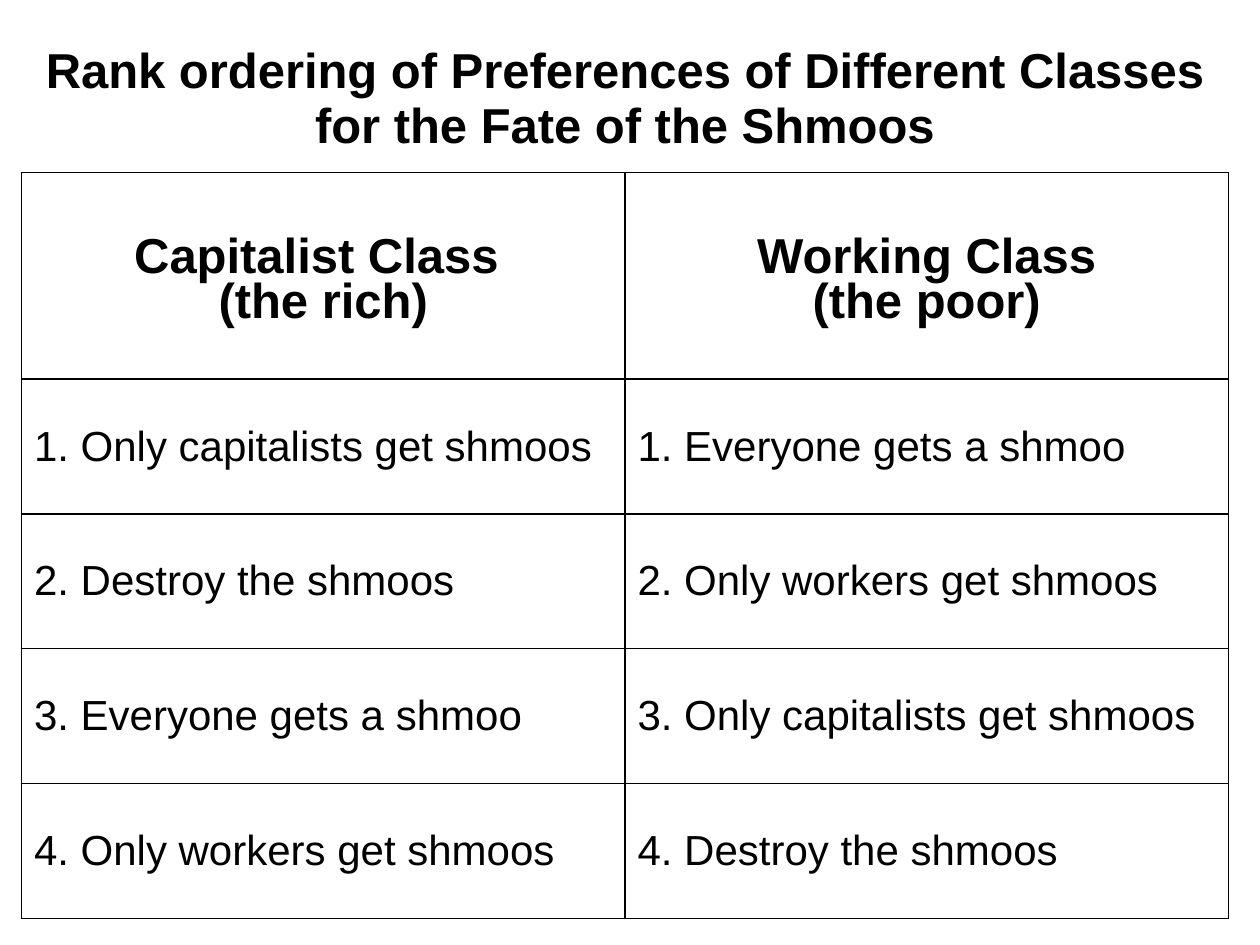
from pptx import Presentation
from pptx.dml.color import RGBColor
from pptx.enum.text import MSO_ANCHOR, PP_ALIGN
from pptx.oxml.ns import qn
from pptx.util import Inches, Pt
from lxml.etree import SubElement

BLACK = RGBColor(0, 0, 0)
WHITE = RGBColor(255, 255, 255)

TITLE = "Rank ordering of Preferences of Different Classes for the Fate of the Shmoos"
HEADINGS = [["Capitalist Class ", "(the rich)"], ["Working Class", "(the poor)"]]
PREFERENCES = [
    ("Only capitalists get shmoos", "Everyone gets a shmoo"),
    ("Destroy the shmoos", "Only workers get shmoos"),
    ("Everyone gets a shmoo", "Only capitalists get shmoos"),
    ("Only workers get shmoos", "Destroy the shmoos"),
]

LEFT, TOP, COL_W = 0.17, 0.3, 4.79
ROW_HEIGHTS = [1.07, 1.64] + [1.07] * len(PREFERENCES)

BOLD = {"name": "Arial", "size": Pt(28), "bold": True}
PLAIN = {"name": "Arial", "size": Pt(24), "bold": False}


def set_borders(cell, sides):
    tcPr = cell._tc.get_or_add_tcPr()
    for side in "LRTB":
        ln = SubElement(tcPr, qn(f"a:ln{side}"), w=str(Pt(1)))
        if side in sides:
            fill = SubElement(ln, qn("a:solidFill"))
            SubElement(fill, qn("a:srgbClr"), val=str(BLACK))
        else:
            SubElement(ln, qn("a:noFill"))


def fill_cell(cell, lines, font, align, anchor, spacing=1.0, margin_top=0.05):
    cell.vertical_anchor = anchor
    cell.margin_top = Inches(margin_top)
    tf = cell.text_frame
    for i, line in enumerate(lines):
        p = tf.paragraphs[0] if i == 0 else tf.add_paragraph()
        p.alignment = align
        p.line_spacing = spacing
        r = p.add_run()
        r.text = line
        r.font.color.rgb = BLACK
        for key, value in font.items():
            setattr(r.font, key, value)


def main():
    prs = Presentation()
    prs.slide_width, prs.slide_height = Inches(10), Inches(7.5)
    s = prs.slides.add_slide(prs.slide_layouts[6])
    table = s.shapes.add_table(
        len(ROW_HEIGHTS), 2, Inches(LEFT), Inches(TOP),
        Inches(2 * COL_W), Inches(sum(ROW_HEIGHTS))).table
    table.first_row = table.horz_banding = False
    for col in table.columns:
        col.width = Inches(COL_W)
    for i, (row, height) in enumerate(zip(table.rows, ROW_HEIGHTS)):
        row.height = Inches(height)
        for cell in row.cells:
            set_borders(cell, "B" if i == 0 else "LRTB")
            cell.fill.solid()
            cell.fill.fore_color.rgb = WHITE

    table.cell(0, 0).merge(table.cell(0, 1))
    fill_cell(table.cell(0, 0), [TITLE], BOLD, PP_ALIGN.CENTER, MSO_ANCHOR.TOP)
    for c, lines in enumerate(HEADINGS):
        fill_cell(table.cell(1, c), lines, BOLD, PP_ALIGN.CENTER,
                  MSO_ANCHOR.MIDDLE, spacing=0.82, margin_top=0.15)
    for rank, choices in enumerate(PREFERENCES, 1):
        for c, choice in enumerate(choices):
            fill_cell(table.cell(rank + 1, c), [f"{rank}. {choice}"], PLAIN,
                      PP_ALIGN.LEFT, MSO_ANCHOR.MIDDLE)
    prs.save("out.pptx")


if __name__ == "__main__":
    main()
